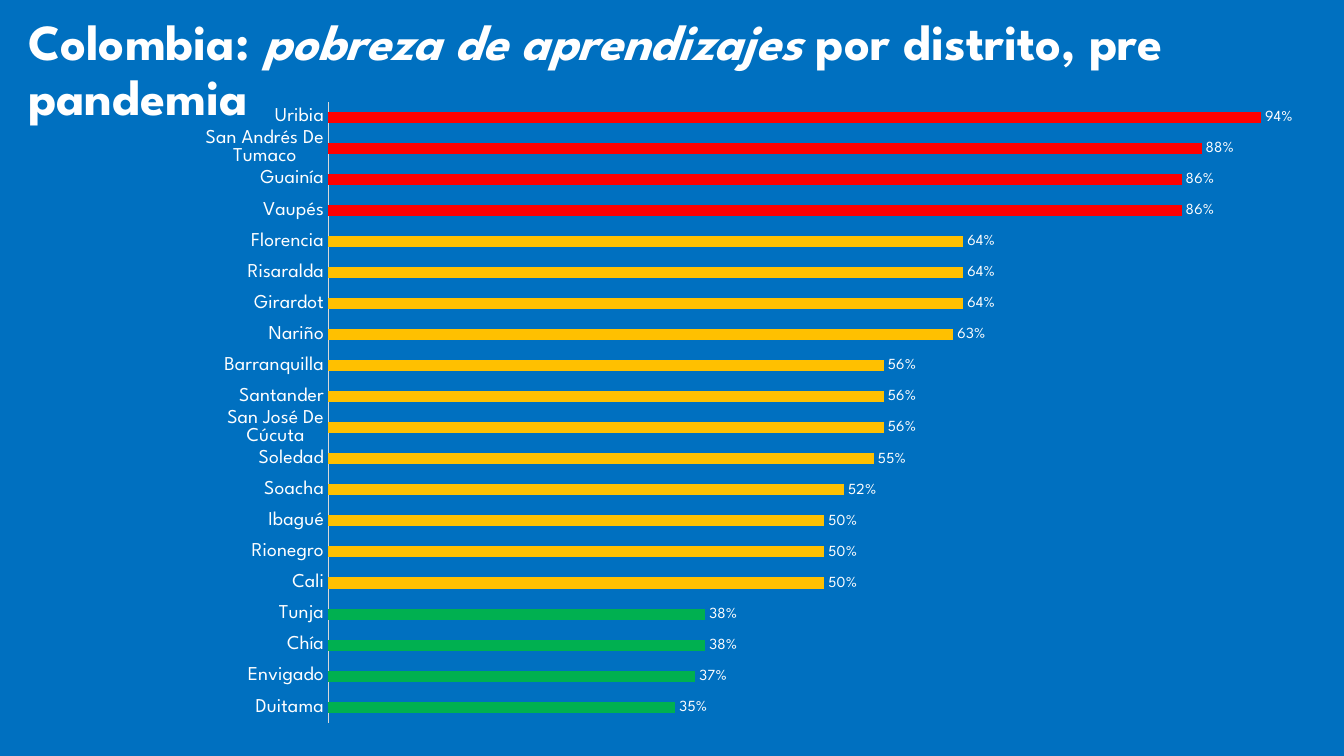
from pptx import Presentation
from pptx import util as u
from pptx.chart.data import CategoryChartData
from pptx.dml.color import RGBColor
from pptx.enum import chart as c, text as t

WIDTH, HEIGHT = u.Inches(13.33), u.Inches(7.5)
FONT = "League Spartan"
COLORS = {
    "background": "0070C0",
    "text": "FFFFFF",
    "axis": "D9D9D9",
    "series": "4472C4",
    "low": "00B050",
    "medium": "FFC000",
    "high": "FF0000",
}
DISTRICTS = {
    "Duitama": 0.35,
    "Envigado": 0.37,
    "Chía": 0.38,
    "Tunja": 0.38,
    "Cali": 0.50,
    "Rionegro": 0.50,
    "Ibagué": 0.50,
    "Soacha": 0.52,
    "Soledad": 0.55,
    "San José De Cúcuta": 0.56,
    "Santander": 0.56,
    "Barranquilla": 0.56,
    "Nariño": 0.63,
    "Girardot": 0.64,
    "Risaralda": 0.64,
    "Florencia": 0.64,
    "Vaupés": 0.86,
    "Guainía": 0.86,
    "San Andrés De Tumaco": 0.88,
    "Uribia": 0.94,
}
TITLE_RUNS = [
    ("Colombia:", False),
    (" pobreza de aprendizajes ", True),
    ("por distrito, pre pandemia", False),
]


def color(name):
    return RGBColor.from_string(COLORS[name])


def fill(target, name):
    target.fill.solid()
    target.fill.fore_color.rgb = color(name)


def style_font(font, size):
    font.name = FONT
    font.size = u.Pt(size)
    font.color.rgb = color("text")


def place(left, top, width, height):
    return [int(share * side) for share, side in
            zip((left, top, width, height), (WIDTH, HEIGHT) * 2)]


def level(value):
    if value < 0.5:
        return "low"
    return "medium" if value < 0.8 else "high"


def style_axes(chart):
    districts = chart.category_axis
    districts.major_tick_mark = c.XL_TICK_MARK.NONE
    districts.has_major_gridlines = False
    districts.format.line.color.rgb = color("axis")
    districts.format.line.width = u.Pt(0.75)
    style_font(districts.tick_labels.font, 14)
    shares = chart.value_axis
    shares.visible = False
    shares.has_major_gridlines = False
    shares.minimum_scale, shares.maximum_scale = 0, 1


def style_bars(plot):
    plot.gap_width = 182
    plot.vary_by_categories = False
    series = plot.series[0]
    series.invert_if_negative = False
    fill(series.format, "series")
    for index, value in enumerate(DISTRICTS.values()):
        fill(series.points[index].format, level(value))
    labels = series.data_labels
    labels.show_value = True
    labels.position = c.XL_LABEL_POSITION.OUTSIDE_END
    labels.number_format = "0%"
    labels.number_format_is_linked = False
    style_font(labels.font, 11)


def add_bar_chart(slide, box):
    data = CategoryChartData(number_format="0%")
    data.categories = list(DISTRICTS)
    data.add_series("Series 1", list(DISTRICTS.values()))
    chart = slide.shapes.add_chart(c.XL_CHART_TYPE.BAR_CLUSTERED, *box, data).chart
    chart.has_legend = False
    chart.has_title = False
    chart.font.name = "Calibri"
    chart.font.size = u.Pt(10)
    style_axes(chart)
    style_bars(chart.plots[0])


def add_title(slide, box):
    frame = slide.shapes.add_textbox(*box).text_frame
    frame.word_wrap = True
    frame.vertical_anchor = t.MSO_ANCHOR.MIDDLE
    paragraph = frame.paragraphs[0]
    paragraph.line_spacing = 0.9
    for words, italic in TITLE_RUNS:
        run = paragraph.add_run()
        run.text = words
        style_font(run.font, 36)
        run.font.bold = True
        run.font.italic = italic


def main():
    presentation = Presentation()
    presentation.slide_width, presentation.slide_height = WIDTH, HEIGHT
    slide = presentation.slides.add_slide(presentation.slide_layouts[6])
    fill(slide.background, "background")
    chart_left = 1.81 / 13.33
    add_bar_chart(slide, place(chart_left, 0.88 / 7.5, 1 - chart_left, 6.42 / 7.5))
    add_title(slide, place(0.18 / 13.33, 0.09 / 7.5, 12.98 / 13.33, 1.24 / 7.5))
    presentation.save("out.pptx")


if __name__ == "__main__":
    main()
